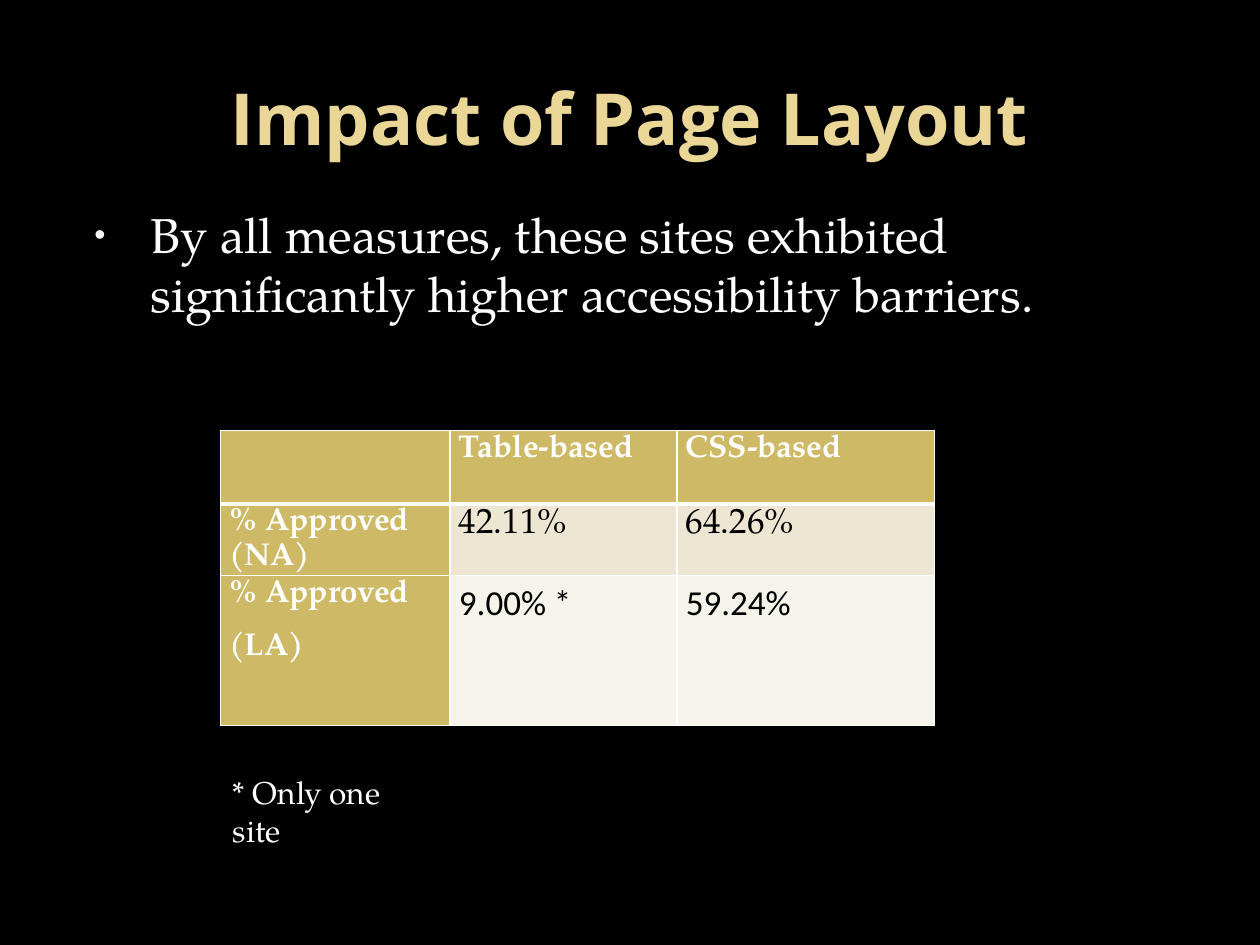
from lxml.etree import SubElement
from pptx import Presentation
from pptx.dml.color import RGBColor
from pptx.enum.text import MSO_ANCHOR, PP_ALIGN
from pptx.oxml.ns import qn
from pptx.util import Pt

BLACK = RGBColor(0x00, 0x00, 0x00)
WHITE = RGBColor(0xFF, 0xFF, 0xFF)
BULLET = RGBColor(0xF9, 0xF9, 0xF9)
TITLE = RGBColor(0xEA, 0xD6, 0x96)
GOLD = RGBColor(0xCE, 0xB9, 0x66)
BAND = RGBColor(0xED, 0xE6, 0xD3)
PALE = RGBColor(0xF6, 0xF3, 0xEA)

SERIF = "TeX Gyre Pagella"
HEADING = "Open Sans"
SANS = "Calibri"


class SlideBuilder:
    def __init__(self, page):
        self.page = page
        fill = page.background.fill
        fill.solid()
        fill.fore_color.rgb = BLACK

    def style(self, para, size, color=WHITE, font=SERIF, bold=False):
        for span in para.runs:
            span.font.name = font
            span.font.size = Pt(size)
            span.font.bold = bold
            span.font.color.rgb = color

    def title(self, text, left, top, width, height):
        box = self.page.shapes.title
        box.left, box.top, box.width, box.height = map(Pt, (left, top, width, height))
        frame = box.text_frame
        frame.text = text
        frame.vertical_anchor = MSO_ANCHOR.MIDDLE
        para = frame.paragraphs[0]
        para.alignment = PP_ALIGN.CENTER
        self.style(para, 41, TITLE, HEADING, True)

    def text(self, text, left, top, width, height, size):
        box = self.page.shapes.add_textbox(*map(Pt, (left, top, width, height)))
        frame = box.text_frame
        frame.word_wrap = True
        frame.text = text
        para = frame.paragraphs[0]
        self.style(para, size)
        return para

    def bullet(self, para, indent, hanging):
        props = para._p.get_or_add_pPr()
        props.set("marL", str(Pt(indent)))
        props.set("indent", str(-Pt(hanging)))
        color = SubElement(props, qn("a:buClr"))
        SubElement(color, qn("a:srgbClr"), val=str(BULLET))
        SubElement(props, qn("a:buSzPct"), val="65000")
        SubElement(props, qn("a:buFont"), typeface="Arial")
        SubElement(props, qn("a:buChar"), char="•")

    def border(self, cell, side, weight):
        line = SubElement(cell._tc.get_or_add_tcPr(), qn(f"a:ln{side}"), w=str(Pt(weight)))
        fill = SubElement(line, qn("a:solidFill"))
        SubElement(fill, qn("a:srgbClr"), val=str(WHITE))

    def cell(self, cell, text, row, column):
        heading = row == 0 or column == 0
        cell.margin_left = cell.margin_right = Pt(5)
        cell.margin_top = cell.margin_bottom = 0
        # The rule under the header row is heavier
        for side in "LRTB":
            heavy = (side == "B" and row == 0) or (side == "T" and row == 1)
            self.border(cell, side, 3 if heavy else 1)
        cell.fill.solid()
        cell.fill.fore_color.rgb = GOLD if heading else (BAND if row == 1 else PALE)
        cell.text_frame.text = text
        sans = row == 2 and not heading
        for para in cell.text_frame.paragraphs:
            para.space_after = Pt(10)
            if sans:
                para.line_spacing = 1.15
            else:
                para.line_spacing = Pt(20 if heading else 22.5)
            self.style(para, 18 if heading else 20, WHITE if heading else BLACK,
                       SANS if sans else SERIF, heading)

    def table(self, rows, left, top, widths, heights):
        frame = self.page.shapes.add_table(len(rows), len(widths), Pt(left), Pt(top),
                                           Pt(sum(widths)), Pt(sum(heights)))
        table = frame.table
        table.first_row = table.horz_banding = False
        for column, width in zip(table.columns, widths):
            column.width = Pt(width)
        for row, height in zip(table.rows, heights):
            row.height = Pt(height)
        for row, values in enumerate(rows):
            for column, value in enumerate(values):
                self.cell(table.cell(row, column), value, row, column)


def main():
    deck = Presentation()
    deck.slide_width, deck.slide_height = Pt(720), Pt(540)
    builder = SlideBuilder(deck.slides.add_slide(deck.slide_layouts[5]))

    # Title and main statement
    builder.title("Impact of Page Layout", 36, 21.6, 648, 90)
    statement = builder.text(
        "By all measures, these sites exhibited significantly higher accessibility barriers.",
        36, 113.5, 648, 324, 28)
    builder.bullet(statement, 43.2, 32.4)

    # Approval rates by layout technique
    builder.table([
        ["", "Table-based", "CSS-based"],
        ["% Approved (NA)", "42.11%", "64.26%"],
        ["% Approved\n(LA)", "9.00% *", "59.24%"],
    ], 126, 246, [131.3, 129.7, 147], [42, 41, 85.5])

    # Footnote
    builder.text("* Only one site", 126, 438, 124.5, 29, 18)

    deck.save("out.pptx")


if __name__ == "__main__":
    main()
